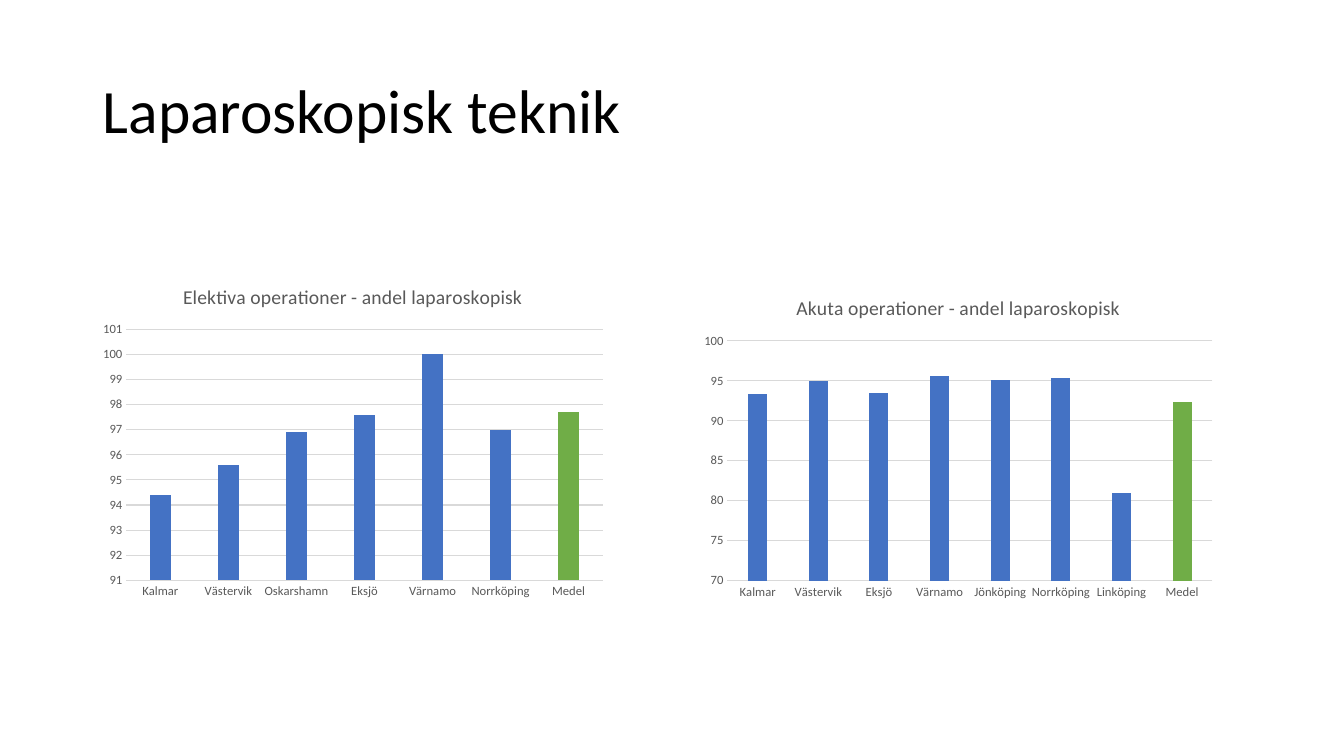
from dataclasses import dataclass

from pptx import Presentation
from pptx import util as u
from pptx.chart.data import CategoryChartData
from pptx.dml.color import RGBColor
from pptx.enum import chart as charts, text


@dataclass(frozen=True)
class Theme:
    font: str = "Calibri"
    ink: str = "000000"
    muted: str = "595959"
    rule: str = "D9D9D9"
    hospital: str = "4472C4"
    mean: str = "70AD47"
    heading: int = 44
    chart_title: int = 14
    label: int = 9
    hairline: float = 0.75


THEME = Theme()
WIDTH, HEIGHT = 13.33, 7.5

# Boxes: left, top, width, height in inches
TITLE_BOX = (0.92, 0.4, 11.5, 1.45)
CHART_BOTTOM = 6.01

# The last category of each chart is the mean
ELECTIVE = {
    "title": "Elektiva operationer - andel laparoskopisk",
    "shares": {"Kalmar": 94.4, "Västervik": 95.6, "Oskarshamn": 96.9,
               "Eksjö": 97.6, "Värnamo": 100, "Norrköping": 97, "Medel": 97.7},
    "scale": {"minimum_scale": 91, "maximum_scale": 101, "major_unit": 1},
}
ACUTE = {
    "title": "Akuta operationer - andel laparoskopisk",
    "shares": {"Kalmar": 93.3, "Västervik": 95, "Eksjö": 93.5, "Värnamo": 95.6,
               "Jönköping": 95.1, "Norrköping": 95.3, "Linköping": 81, "Medel": 92.4},
    "scale": {"minimum_scale": 70, "maximum_scale": 100, "major_unit": 5},
}


def assign(target, values):
    for name, value in values.items():
        setattr(target, name, value)


def style_font(font, size, color):
    assign(font, {"name": THEME.font, "size": u.Pt(size), "bold": False})
    font.color.rgb = RGBColor.from_string(color)


def paint(fill, color):
    fill.solid()
    fill.fore_color.rgb = RGBColor.from_string(color)


def draw_rule(line):
    line.width = u.Pt(THEME.hairline)
    line.color.rgb = RGBColor.from_string(THEME.rule)


def add_title(page, box, words):
    frame = page.shapes.add_textbox(*map(u.Inches, box)).text_frame
    assign(frame, {"word_wrap": True, "vertical_anchor": text.MSO_ANCHOR.MIDDLE})
    para = frame.paragraphs[0]
    para.line_spacing = 0.9
    span = para.add_run()
    span.text = words
    style_font(span.font, THEME.heading, THEME.ink)


def add_share_chart(page, box, content):
    data = CategoryChartData()
    data.categories = list(content["shares"])
    data.add_series(content["title"], list(content["shares"].values()))
    chart = page.shapes.add_chart(
        charts.XL_CHART_TYPE.COLUMN_CLUSTERED, *map(u.Inches, box), data).chart
    style_font(chart.font, THEME.label, THEME.muted)
    assign(chart, {"has_legend": False, "has_title": True})

    # Chart title
    para = chart.chart_title.text_frame.paragraphs[0]
    span = para.add_run()
    span.text = content["title"]
    style_font(span.font, THEME.chart_title, THEME.muted)
    chart.chart_title.include_in_layout = False

    # Axes and gridlines
    for axis in (chart.category_axis, chart.value_axis):
        assign(axis, {"major_tick_mark": charts.XL_TICK_MARK.NONE,
                      "minor_tick_mark": charts.XL_TICK_MARK.NONE})
        style_font(axis.tick_labels.font, THEME.label, THEME.muted)
    draw_rule(chart.category_axis.format.line)
    assign(chart.value_axis, content["scale"])
    chart.value_axis.format.line.fill.background()
    draw_rule(chart.value_axis.major_gridlines.format.line)

    # Columns, with the mean picked out
    plot = chart.plots[0]
    assign(plot, {"gap_width": 219, "overlap": -27, "vary_by_categories": False})
    columns = plot.series[0]
    columns.invert_if_negative = False
    paint(columns.format.fill, THEME.hospital)
    paint(columns.points[len(content["shares"]) - 1].format.fill, THEME.mean)


def build_slide(deck):
    page = deck.slides.add_slide(deck.slide_layouts[6])
    add_title(page, TITLE_BOX, "Laparoskopisk teknik")
    for left, top, width, content in ((0.92, 2.65, 5.16, ELECTIVE),
                                      (6.88, 2.77, 5.25, ACUTE)):
        add_share_chart(page, (left, top, width, CHART_BOTTOM - top), content)


def main():
    deck = Presentation()
    assign(deck, {"slide_width": u.Inches(WIDTH), "slide_height": u.Inches(HEIGHT)})
    build_slide(deck)
    deck.save("out.pptx")


if __name__ == "__main__":
    main()
